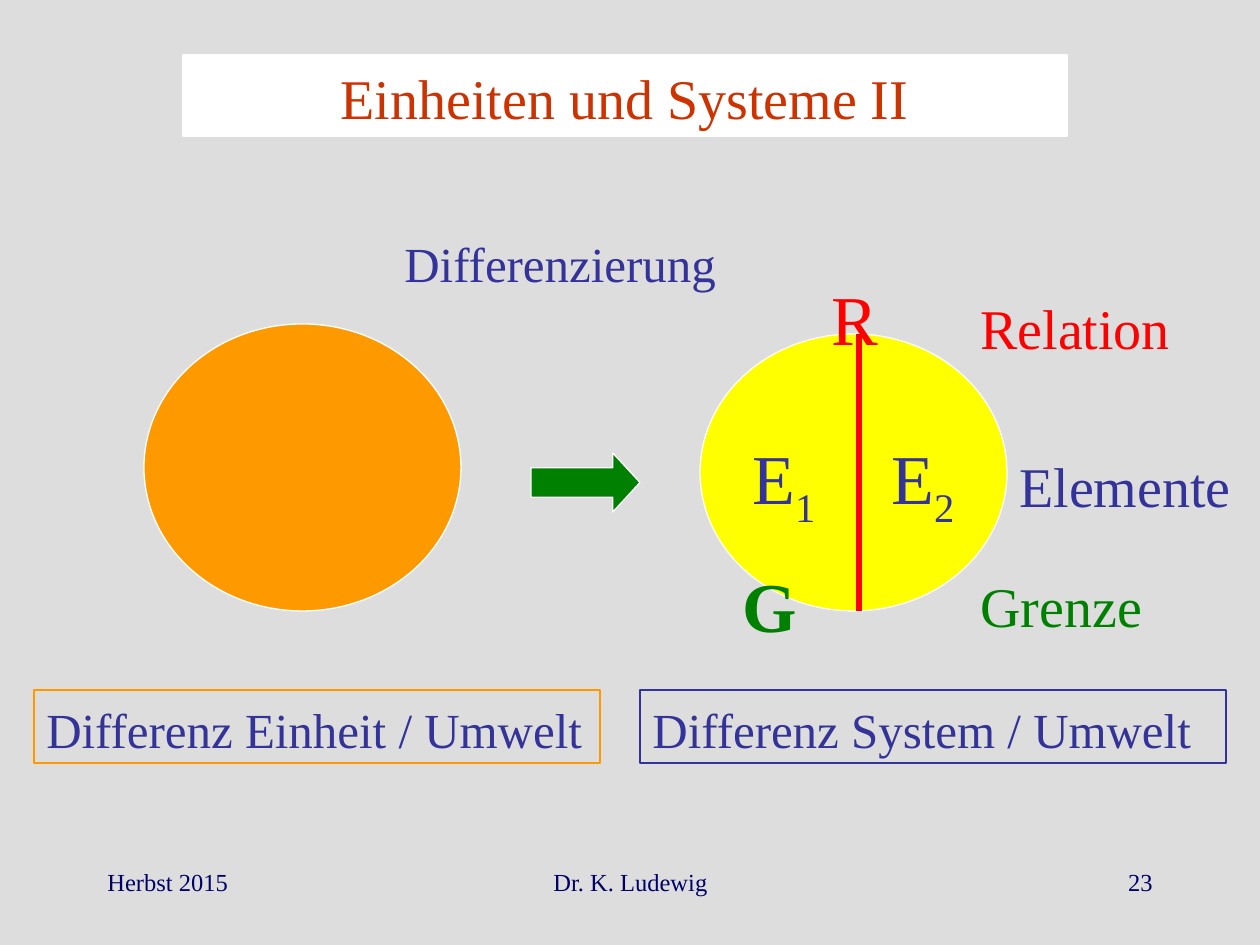
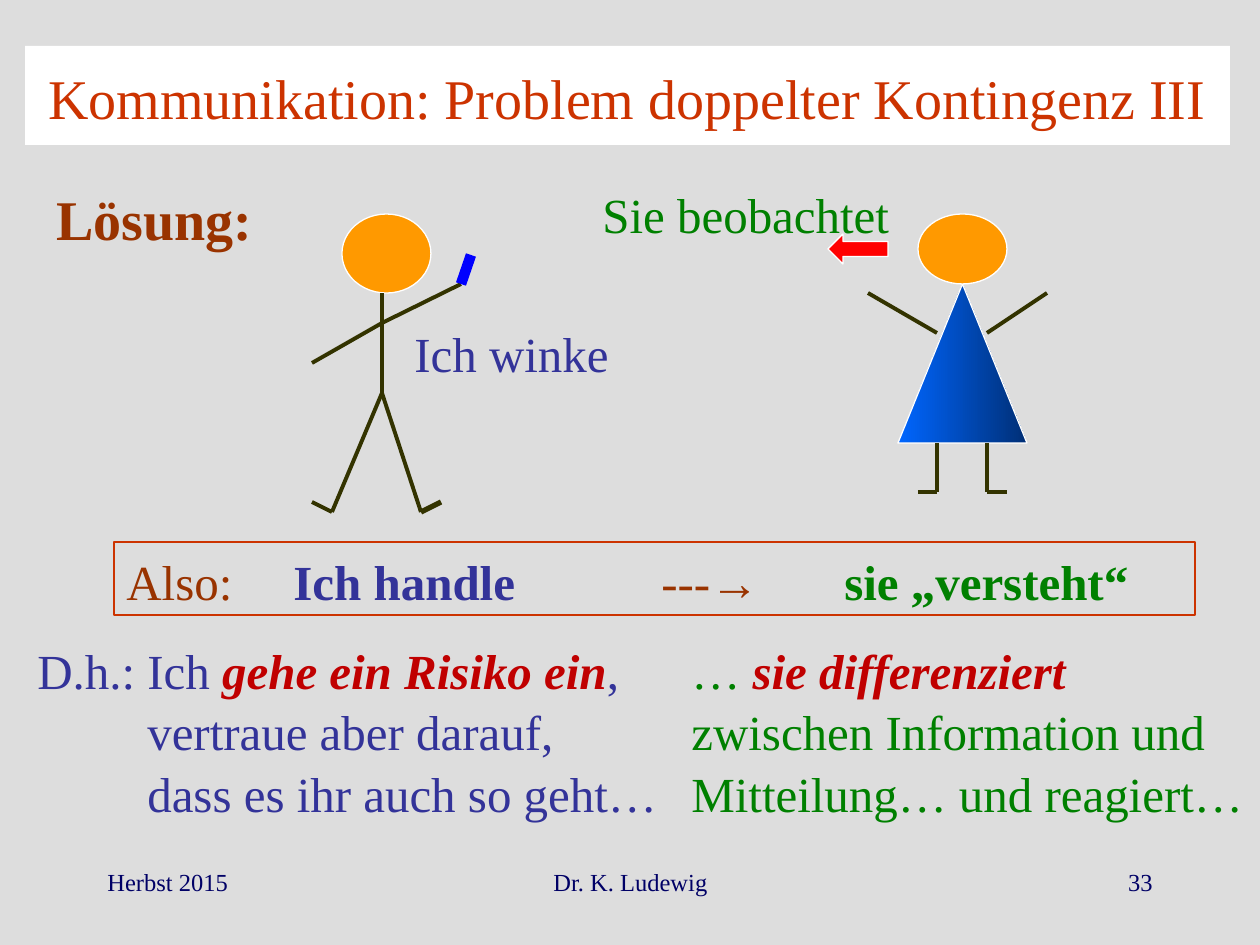
from lxml import etree
from pptx import Presentation
from pptx import util as u
from pptx.dml.color import RGBColor
from pptx.enum import shapes as sh, text as tx
from pptx.oxml.ns import qn

HEX = {
    "back": "DDDDDD", "white": "FFFFFF", "title": "CC3300", "foot": "000066",
    "blue": "333399", "red": "FF0000", "green": "008000", "brown": "993300",
    "dark": "C00000", "orange": "FF9900", "yellow": "FFFF00", "limb": "333300",
    "wave": "0000FF", "sky": "0066FF", "navy": "002F76",
}
FACE = "Times New Roman"
KIND = sh.MSO_SHAPE
LEFT, MID, RIGHT = tx.PP_ALIGN.LEFT, tx.PP_ALIGN.CENTER, tx.PP_ALIGN.RIGHT


def px(n):
    """Turn pixels (126 to the inch) into EMU."""
    return u.Emu(round(n * 914400 / 126))


def rgb(name):
    return RGBColor.from_string(HEX[name])


# Text

def style(par, size, color, bold=None, align=LEFT, gap=1.05):
    par.alignment = align
    par.line_spacing = gap
    font = par.font
    font.name, font.size, font.bold = FACE, u.Pt(size), bold
    font.color.rgb = rgb(color)


def add_run(par, words, color=None, bold=None, italic=None):
    run = par.add_run()
    run.text = words
    run.font.bold, run.font.italic = bold, italic
    if color:
        run.font.color.rgb = rgb(color)
    return run


def set_tabs(par, stops):
    tabs = etree.SubElement(par._p.get_or_add_pPr(), qn("a:tabLst"))
    for stop in stops:
        etree.SubElement(tabs, qn("a:tab"), pos=str(px(stop)), algn="l")


def label(slide, box, words, size, color, **look):
    """Add a text box and return its first paragraph."""
    frame = slide.shapes.add_textbox(*map(px, box)).text_frame
    frame.word_wrap = True
    par = frame.paragraphs[0]
    if words:
        add_run(par, words)
    style(par, size, color, **look)
    return par


# Shapes and lines

def shape(parts, kind, box, fill, line="white"):
    item = parts.add_shape(kind, *map(px, box))
    item.shadow.inherit = False
    if fill:
        item.fill.solid()
        item.fill.fore_color.rgb = rgb(fill)
    else:
        item.fill.background()
    item.line.color.rgb = rgb(line)
    item.line.width = u.Pt(0.75)
    return item


def stroke(parts, ends, color="limb", width=2.25):
    line = parts.add_connector(sh.MSO_CONNECTOR.STRAIGHT, *map(px, ends))
    line.line.color.rgb = rgb(color)
    line.line.width = u.Pt(width)
    etree.SubElement(line._element.spPr, qn("a:effectLst"))


def framed(slide, box, line):
    """Add an outlined box and return its empty paragraph."""
    frame = shape(slide.shapes, KIND.RECTANGLE, box, None, line).text_frame
    frame.word_wrap = True
    frame.vertical_anchor = tx.MSO_ANCHOR.TOP
    return frame.paragraphs[0]


# Shared parts of every slide

def start(prs, title, box, number, edge=False):
    slide = prs.slides.add_slide(prs.slide_layouts[5])
    head = slide.shapes.title
    head.left, head.top, head.width, head.height = map(px, box)
    head.fill.solid()
    head.fill.fore_color.rgb = rgb("white")
    if edge:
        head.line.color.rgb = rgb("white")
        head.line.width = u.Pt(0.75)
    frame = head.text_frame
    frame.text = title
    frame.auto_size = tx.MSO_AUTO_SIZE.NONE
    frame.vertical_anchor = tx.MSO_ANCHOR.MIDDLE
    style(frame.paragraphs[0], 32, "title", align=MID)

    feet = [(95, 262, "Herbst 2015", LEFT), (431, 399, "Dr. K. Ludewig", MID),
            (903, 262, number, RIGHT)]
    for left, wide, words, align in feet:
        label(slide, (left, 861, wide, 63), words, 14, "foot", align=align, gap=1)
    return slide


# Slide: units and systems

def system(slide, x, y):
    """Divided circle with its elements, relation and border."""
    parts = slide.shapes
    shape(parts, KIND.OVAL, (x, y, 307, 277), "yellow")
    stroke(parts, (x + 159, y, x + 159, y + 277), "red", 3)
    for left, index in ((40, "1"), (179, "2")):
        par = label(slide, (x + left, y + 90, 100, 97), "E", 40, "blue")
        low = add_run(par, index)
        low._r.get_or_add_rPr().set("baseline", "-25000")
    label(slide, (x + 119, y - 69, 72, 97), "R", 40, "red")
    label(slide, (x + 30, y + 218, 80, 97), "G", 40, "green", bold=True)

    # Legend on the right
    for left, top, wide, words, color in (
            (268, -50, 222, "Relation", "red"),
            (307, 108, 253, "Elemente", "blue"),
            (268, 228, 198, "Grenze", "green")):
        label(slide, (x + left, y + top, wide, 79), words, 32, color)


def units(prs):
    slide = start(prs, "Einheiten und Systeme II", (183, 55, 884, 81), "23", True)
    label(slide, (392, 224, 358, 72), "Differenzierung", 28, "blue")
    shape(slide.shapes, KIND.OVAL, (144, 324, 317, 287), "orange")
    system(slide, 700, 334)
    arrow = shape(slide.shapes, KIND.RIGHT_ARROW, (531, 453, 109, 59), "green")
    arrow.adjustments[1] = 0.46

    for left, wide, line, words in (
            (34, 566, "orange", "Differenz Einheit / Umwelt"),
            (640, 586, "blue", "Differenz System / Umwelt")):
        par = framed(slide, (left, 690, wide, 73), line)
        add_run(par, words)
        style(par, 28, "blue")


# Slide: double contingency

def limbs(parts, x, y, rows):
    for x1, y1, x2, y2 in rows:
        stroke(parts, (x + x1, y + y1, x + x2, y + y2))


def man(slide, x, y):
    parts = slide.shapes.add_group_shape().shapes
    shape(parts, KIND.OVAL, (x + 30, y, 89, 79), "orange")
    limbs(parts, x, y, [
        (70, 79, 70, 179),                          # trunk
        (70, 109, 0, 149), (70, 109, 149, 70),      # arms
        (70, 179, 20, 298), (20, 298, 0, 288),      # left leg
        (70, 179, 109, 298)])                       # right leg
    stroke(parts, (x + 109, y + 298, x + 129, y + 288), width=3)
    # Waving hand
    stroke(slide.shapes, (x + 149, y + 70, x + 159, y + 41), "wave", 6)


def woman(slide, x, y):
    parts = slide.shapes.add_group_shape().shapes
    dress = shape(parts, KIND.ISOSCELES_TRIANGLE, (x + 30, y + 70, 129, 159), "sky")
    dress.fill.gradient()
    dress.fill.gradient_angle = 0
    for stop, place, color in zip(dress.fill.gradient_stops, (0, 1), ("sky", "navy")):
        stop.position = place
        stop.color.rgb = rgb(color)
    limbs(parts, x, y, [
        (69, 119, 0, 79), (119, 119, 179, 79),      # arms
        (69, 229, 69, 278), (50, 278, 69, 278),     # left leg
        (119, 229, 119, 278), (119, 278, 139, 278)])  # right leg
    shape(parts, KIND.OVAL, (x + 50, y, 89, 70), "orange")


def result(slide, box):
    par = framed(slide, box, "title")
    set_tabs(par, (167, 535, 718))
    add_run(par, "Also:\t")
    add_run(par, "Ich handle", "blue", True)
    add_run(par, "\t---→\t")
    add_run(par, "sie „versteht“", "green", True)
    style(par, 28, "brown")


def reading(slide, x, y):
    """Two columns that spell out what each side does."""
    first = label(slide, (x, y, 655, 189), "D.h.: Ich ", 28, "blue")
    add_run(first, "gehe ein Risiko ein", "dark", True, True)
    add_run(first, ",")
    frame = first._parent
    for words in ("vertraue aber darauf,", "dass es ihr auch so geht…"):
        par = frame.add_paragraph()
        add_run(par, words)
        style(par, 28, "blue")
    for par in frame.paragraphs:
        par._p.get_or_add_pPr().set("marL", str(px(110)))
    first._p.pPr.set("indent", str(-px(110)))

    right = label(slide, (x + 654, y, 581, 189), "… ", 28, "green")
    add_run(right, "sie differenziert", "dark", True, True)
    par = right._parent.add_paragraph()
    add_run(par, "zwischen Information und Mitteilung… und reagiert…")
    style(par, 28, "green")


def contact(prs):
    slide = start(prs, "Kommunikation: Problem doppelter Kontingenz III",
                  (25, 46, 1205, 99), "33")
    label(slide, (44, 175, 232, 79), "Lösung:", 32, "brown", bold=True)
    label(slide, (402, 314, 238, 72), "Ich winke", 28, "blue")
    woman(slide, 868, 214)
    shape(slide.shapes, KIND.LEFT_ARROW, (828, 234, 60, 30), "red")
    label(slide, (590, 175, 320, 72), "Sie beobachtet", 28, "green")
    result(slide, (114, 542, 1081, 73))
    man(slide, 312, 214)
    reading(slide, 25, 631)


def main():
    prs = Presentation()
    prs.slide_width, prs.slide_height = px(1260), px(945)
    back = prs.slide_master.background.fill
    back.solid()
    back.fore_color.rgb = rgb("back")
    units(prs)
    contact(prs)
    prs.save("out.pptx")


if __name__ == "__main__":
    main()
